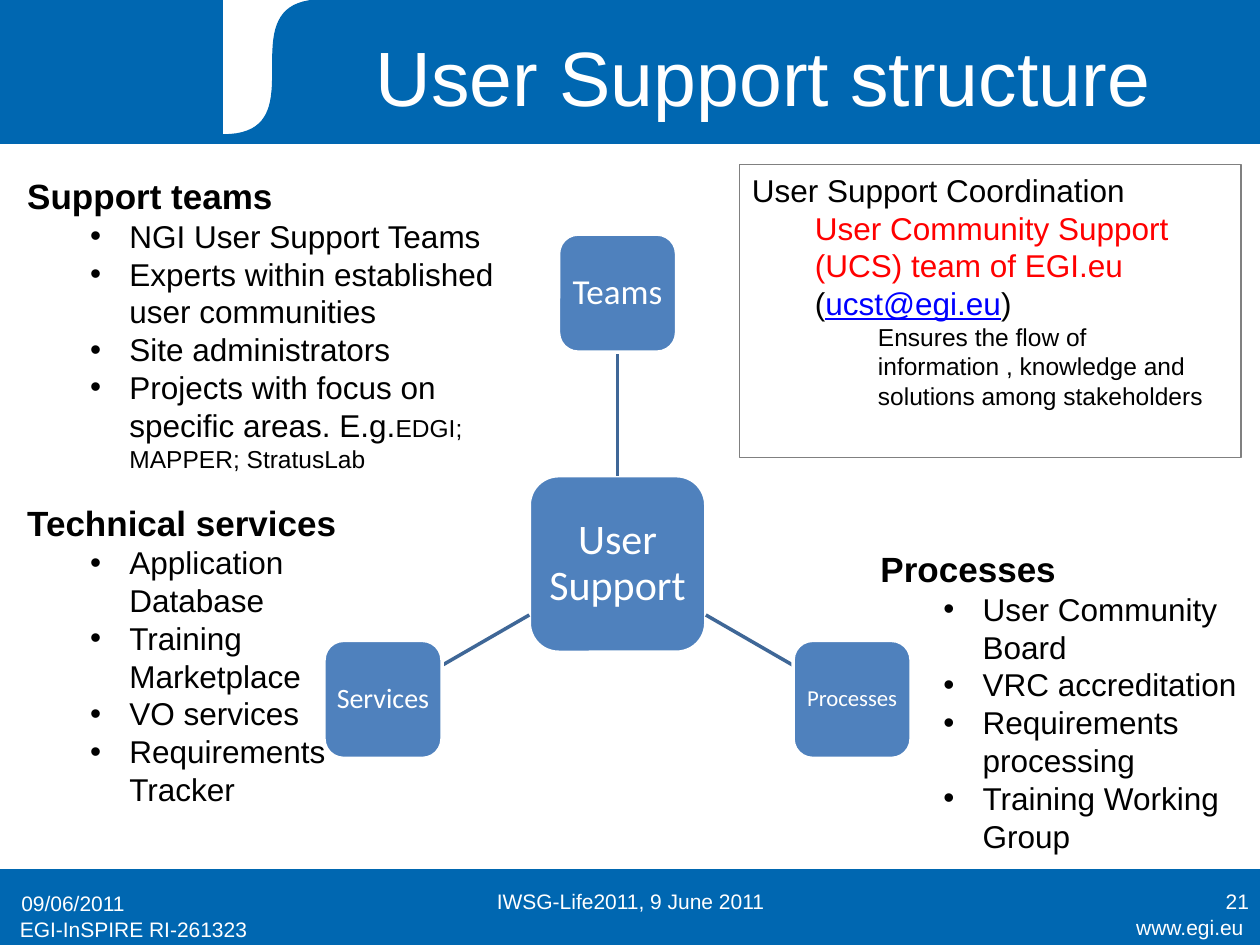
from math import cos, radians, sin
from lxml.etree import SubElement
from pptx import Presentation
from pptx.dml.color import RGBColor
from pptx.enum.shapes import MSO_CONNECTOR, MSO_SHAPE
from pptx.enum.text import MSO_ANCHOR, PP_ALIGN
from pptx.oxml.ns import qn
from pptx.util import Cm, Pt

BLUE = RGBColor(0x00, 0x67, 0xB1)
NODE = RGBColor(0x4F, 0x81, 0xBD)
SPOKE = RGBColor(0x3F, 0x67, 0x97)
WHITE = RGBColor(0xFF, 0xFF, 0xFF)
BLACK = RGBColor(0x00, 0x00, 0x00)
GREY = RGBColor(0x80, 0x80, 0x80)
RED = RGBColor(0xFF, 0x00, 0x00)
LINK = RGBColor(0x00, 0x00, 0xFF)

HUB = (12.45, 11.37)
HUB_SIDE, NODE_SIDE, RADIUS = 3.56, 2.38, 5.46
NODES = [("Teams", 20, -90), ("Processes", 13, 30), ("Services", 16, 150)]

LISTS = [
    ((0.3, 3.4, 10.8, 6.32), "Support teams",
     ["NGI User Support Teams", "Experts within established user communities",
      "Site administrators", "Projects with focus on specific areas. E.g."],
     "EDGI; MAPPER; StratusLab"),
    ((17.5, 10.92, 7.7, 6.5), "Processes",
     ["User Community Board", "VRC accreditation",
      "Requirements processing", "Training Working Group"], ""),
    ((0.3, 9.98, 7.6, 6.5), "Technical services",
     ["Application Database", "Training Marketplace",
      "VO services", "Requirements Tracker"], ""),
]
FOOTERS = [
    ((21.31, 18.29, 4.01, 0.79), "www.egi.eu", PP_ALIGN.RIGHT),
    ((0.15, 18.34, 6.35, 0.79), "EGI-InSPIRE RI-261323", PP_ALIGN.LEFT),
    ((0.18, 17.7, 5.92, 1.02), "09/06/2011", PP_ALIGN.LEFT),
    ((8.69, 17.65, 8.05, 1.02), "IWSG-Life2011, 9 June 2011", PP_ALIGN.CENTER),
    ((19.51, 17.65, 5.92, 1.02), "21", PP_ALIGN.RIGHT),
]


def style(run, size, color=BLACK, bold=False, face="Arial"):
    """Format one run."""
    font = run.font
    font.name, font.size, font.bold = face, Pt(size), bold
    font.color.rgb = color


def add_run(para, text, size, color=BLACK, bold=False):
    """Append a formatted run and return it."""
    run = para.add_run()
    run.text = text
    style(run, size, color, bold)
    return run


def indent(para, left, hang=0, bullet=False):
    """Set the margins of a paragraph and its bullet."""
    props = para._p.get_or_add_pPr()
    props.set("marL", str(Cm(left)))
    props.set("indent", str(-Cm(hang)))
    if bullet:
        SubElement(props, qn("a:buFont"), typeface="Arial")
        SubElement(props, qn("a:buChar"), char="•")


def add_text(slide, box):
    """Add a wrapping text box and return its frame."""
    frame = slide.shapes.add_textbox(*map(Cm, box)).text_frame
    frame.word_wrap = True
    return frame


def paint(shape, fill, line, width=0.75):
    """Give a shape its fill and outline without a shadow."""
    shape.shadow.inherit = False
    if fill is None:
        shape.fill.background()
    else:
        shape.fill.solid()
        shape.fill.fore_color.rgb = fill
    shape.line.color.rgb = line
    shape.line.width = Pt(width)


def add_box(slide, box, fill, line, kind=MSO_SHAPE.RECTANGLE, width=0.75):
    """Add a painted preset shape."""
    shape = slide.shapes.add_shape(kind, *map(Cm, box))
    paint(shape, fill, line, width)
    return shape


def add_curve(slide, left, right, base, reach, steps=40):
    """Add the blue header area with its S-shaped left edge."""
    points = [(Cm(right), 0), (Cm(right), Cm(base))]
    for step in range(steps + 1):
        t = step / steps
        swing = 3 * t * (1 - t) ** 2 + t ** 3
        drop = (1 - t) ** 3 + 3 * t * (1 - t) ** 2
        points.append((Cm(left + reach * swing), Cm(base * drop)))
    pen = slide.shapes.build_freeform(*points[0], scale=1.0)
    pen.add_line_segments(points[1:], close=True)
    paint(pen.convert_to_shape(), BLUE, BLUE)


def add_title(slide, text):
    """Place the title above the header band."""
    title = slide.shapes.title
    title.left, title.top, title.width, title.height = map(Cm, (5.89, 0.33, 19, 2.41))
    title.element.getparent().append(title.element)
    frame = title.text_frame
    frame.text = text
    frame.vertical_anchor = MSO_ANCHOR.MIDDLE
    para = frame.paragraphs[0]
    para.alignment = PP_ALIGN.CENTER
    style(para.runs[0], 44, WHITE)


def add_footer(slide, box, text, align):
    """Add one white footer label."""
    frame = add_text(slide, box)
    frame.vertical_anchor = MSO_ANCHOR.MIDDLE
    para = frame.paragraphs[0]
    para.alignment = align
    add_run(para, text, 12, WHITE)


def add_node(slide, x, y, side, text, size):
    """Add a labelled rounded square centred on a point."""
    box = (x - side / 2, y - side / 2, side, side)
    shape = add_box(slide, box, NODE, WHITE, MSO_SHAPE.ROUNDED_RECTANGLE, 2)
    frame = shape.text_frame
    frame.word_wrap = True
    frame.margin_left = frame.margin_right = Cm(0.1)
    frame.margin_top = frame.margin_bottom = Cm(0.1)
    frame.vertical_anchor = MSO_ANCHOR.MIDDLE
    frame.text = text
    para = frame.paragraphs[0]
    para.alignment = PP_ALIGN.CENTER
    para.line_spacing = 0.9
    style(para.runs[0], size, WHITE, face="Calibri")


def add_spoke(slide, angle):
    """Draw the line from the hub's edge to the node's edge."""
    dx, dy = cos(radians(angle)), sin(radians(angle))
    span = 2 * max(abs(dx), abs(dy))
    ends = []
    for far in (HUB_SIDE / span, RADIUS - NODE_SIDE / span):
        ends += [Cm(HUB[0] + far * dx), Cm(HUB[1] + far * dy)]
    line = slide.shapes.add_connector(MSO_CONNECTOR.STRAIGHT, *ends)
    line.line.color.rgb = SPOKE
    line.line.width = Pt(2)
    SubElement(line.element.spPr, qn("a:effectLst"))


def add_wheel(slide):
    """Draw the hub and its nodes."""
    add_node(slide, *HUB, HUB_SIDE, "User Support", 24)
    for text, size, angle in NODES:
        add_spoke(slide, angle)
        x = HUB[0] + RADIUS * cos(radians(angle))
        y = HUB[1] + RADIUS * sin(radians(angle))
        add_node(slide, x, y, NODE_SIDE, text, size)


def add_list(slide, box, head, items, tail):
    """Add a bold heading with bullets and an optional small ending."""
    frame = add_text(slide, box)
    add_run(frame.paragraphs[0], head, 20, bold=True)
    for item in items:
        para = frame.add_paragraph()
        para.level = 1
        indent(para, 2.06, 0.79, True)
        add_run(para, item, 18)
    if tail:
        add_run(para, tail, 14)


def add_panel(slide):
    """Add the outlined coordination panel."""
    shape = add_box(slide, (14.91, 3.32, 10.11, 5.9), None, GREY)
    frame = shape.text_frame
    frame.word_wrap = True
    frame.vertical_anchor = MSO_ANCHOR.TOP
    head, team, aim = frame.paragraphs[0], frame.add_paragraph(), frame.add_paragraph()
    for level, para in enumerate((head, team, aim)):
        para.alignment = PP_ALIGN.LEFT
        para.level = level
        indent(para, 1.27 * level)
    add_run(head, "User Support Coordination", 18)
    add_run(team, "User Community Support (UCS) team of EGI.eu ", 18, RED)
    add_run(team, "(", 18)
    add_run(team, "ucst@egi.eu", 18, LINK).font.underline = True
    add_run(team, ")", 18)
    add_run(aim, "Ensures the flow of information , knowledge and "
                 "solutions among stakeholders", 14)


def main():
    """Build and save the slide."""
    deck = Presentation()
    deck.slide_width, deck.slide_height = Cm(25.4), Cm(19.05)
    slide = deck.slides.add_slide(deck.slide_layouts[5])
    add_box(slide, (0, 17.53, 25.4, 1.52), BLUE, BLUE)
    add_box(slide, (0, 0, 25.4, 2.9), BLUE, BLUE)
    add_box(slide, (4.5, 0, 5, 2.72), WHITE, WHITE)
    add_curve(slide, 4.5, 9.5, 2.72, 2)
    add_title(slide, "User Support structure")
    for footer in FOOTERS:
        add_footer(slide, *footer)
    add_wheel(slide)
    for entry in LISTS:
        add_list(slide, *entry)
    add_panel(slide)
    deck.save("out.pptx")


if __name__ == "__main__":
    main()
